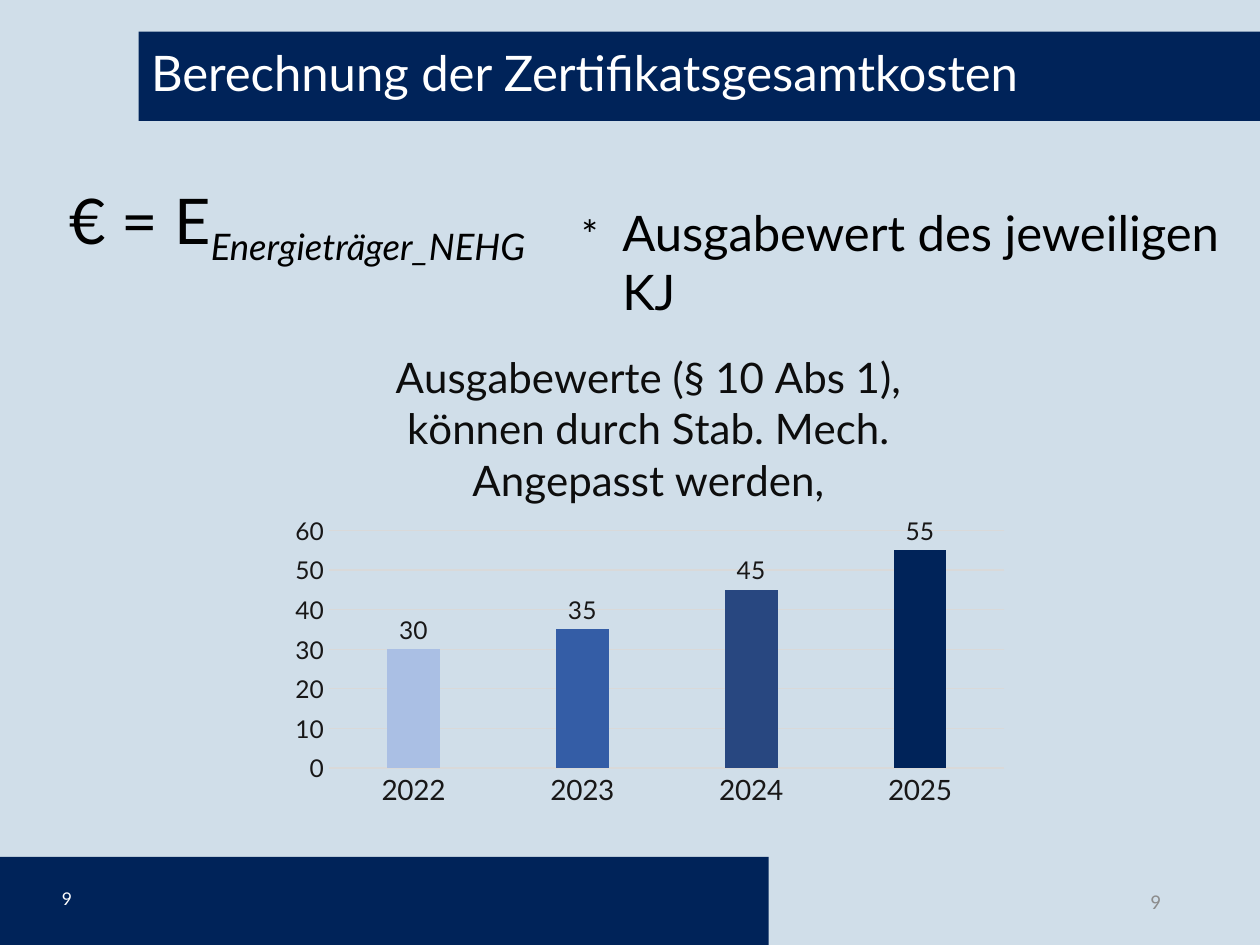
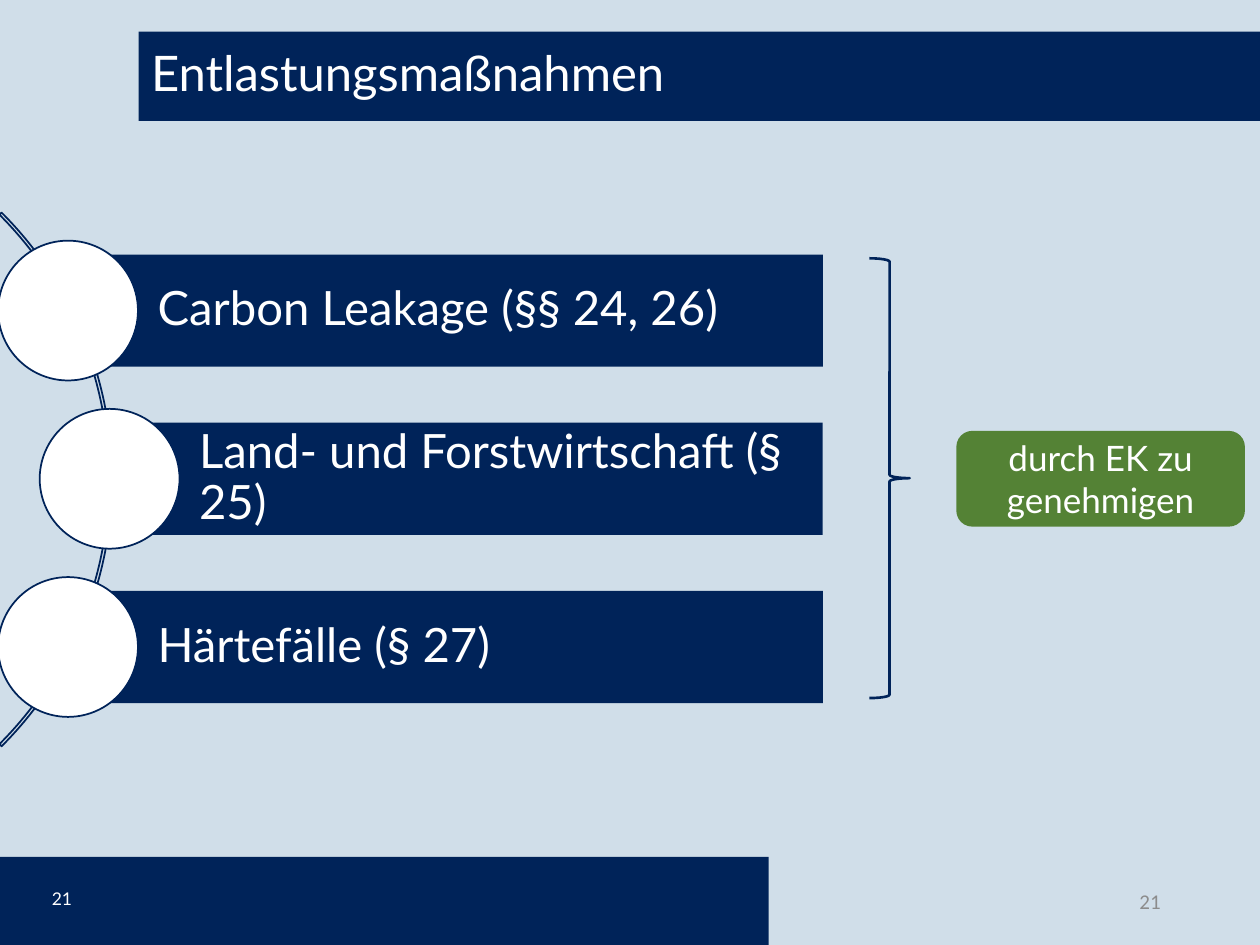
"""Build two slides on certificate costs and relief measures."""
from typing import NamedTuple

from lxml import etree
from pptx import Presentation
from pptx.chart import data as chart_data
from pptx.dml.color import RGBColor
from pptx.enum import chart as charts, shapes, text
from pptx.util import Inches, Pt

NAVY = RGBColor(0x00, 0x23, 0x59)
PALE = RGBColor(0xD0, 0xDE, 0xE9)
WHITE = RGBColor(0xFF, 0xFF, 0xFF)
BLACK = RGBColor(0x00, 0x00, 0x00)
GREY = RGBColor(0x8C, 0x8C, 0x8C)
GRID = RGBColor(0xD9, 0xD9, 0xD9)
INK = RGBColor(0x18, 0x17, 0x17)
TITLE_INK = RGBColor(0x0D, 0x0D, 0x0D)
GREEN = RGBColor(0x54, 0x82, 0x35)
BAR_COLOURS = (RGBColor(0xAA, 0xBF, 0xE4), RGBColor(0x34, 0x5D, 0xA6),
               RGBColor(0x28, 0x47, 0x80), NAVY)
FONT = "Lato"
SHAPE = shapes.MSO_SHAPE
ALIGN = text.PP_ALIGN
ANCHOR = text.MSO_ANCHOR


class Area(NamedTuple):
    """A rectangle in inches."""
    left: float
    top: float
    width: float
    height: float

    def lengths(self) -> list:
        """Return the four lengths for python-pptx."""
        return [Inches(value) for value in self]


class Style(NamedTuple):
    """The look of one paragraph."""
    size: float
    colour: RGBColor = WHITE
    name: str = FONT
    align: ALIGN = ALIGN.LEFT
    spacing: float = 1.0


class Measure(NamedTuple):
    """One relief measure, with its bar's left edge."""
    label: str
    left: float


TITLE = Style(28, spacing=0.9)
MEASURES = (Measure("Carbon Leakage (§§ 24, 26)", 0.54),
            Measure("Land- und Forstwirtschaft (§ 25)", 0.87),
            Measure("Härtefälle (§ 27)", 0.54))
BAR_RIGHT, BAR_TOP, BAR_HEIGHT, BAR_PITCH = 6.53, 2.02, 0.89, 1.335
CIRCLE = 1.11


def set_font(font, size: float, colour: RGBColor, name: str = FONT) -> None:
    """Set size, colour and typeface on a font."""
    font.size, font.name, font.bold = Pt(size), name, False
    font.color.rgb = colour


def write(frame, words: str, style: Style, anchor: ANCHOR = ANCHOR.MIDDLE):
    """Write one paragraph into a text frame and return it."""
    frame.word_wrap = True
    frame.vertical_anchor = anchor
    para = frame.paragraphs[0]
    para.add_run().text = words
    para.alignment, para.line_spacing = style.align, style.spacing
    set_font(para.font, style.size, style.colour, style.name)
    return para


def add_text(page, area: Area, words: str, style: Style,
             anchor: ANCHOR = ANCHOR.MIDDLE):
    """Add a text box with one paragraph and return the paragraph."""
    box = page.shapes.add_textbox(*area.lengths())
    return write(box.text_frame, words, style, anchor)


def add_shape(page, kind: SHAPE, area: Area, fill: RGBColor | None = None,
              line: RGBColor | None = None, weight: float = 1):
    """Add a flat preset shape."""
    shape = page.shapes.add_shape(kind, *area.lengths())
    shape.shadow.inherit = False
    if fill is None:
        shape.fill.background()
    else:
        shape.fill.solid()
        shape.fill.fore_color.rgb = fill
    if line is None:
        shape.line.fill.background()
    else:
        shape.line.color.rgb = line
        shape.line.width = Pt(weight)
    return shape


def add_page(deck, title: str, number: int):
    """Add a slide with the shared bands, title and page numbers."""
    page = deck.slides.add_slide(deck.slide_layouts[6])
    page.background.fill.solid()
    page.background.fill.fore_color.rgb = PALE
    add_shape(page, SHAPE.RECTANGLE, Area(1.1, 0.25, 8.9, 0.71), NAVY)
    add_text(page, Area(7.06, 6.95, 2.25, 0.4), str(number),
             Style(12, GREY, "Calibri", ALIGN.RIGHT))
    add_shape(page, SHAPE.RECTANGLE, Area(0, 6.8, 6.1, 0.7), NAVY)
    add_text(page, Area(0.17, 6.93, 0.5, 0.4), str(number),
             Style(10, align=ALIGN.RIGHT))
    add_text(page, Area(1.1, 0.24, 8.62, 0.72), title, TITLE)
    return page


def place_plot(chart, area: Area) -> None:
    """Fix the inner plot area, in fractions of the chart."""
    plot = chart._chartSpace.chart.plotArea
    space = plot.nsmap["c"]
    for old in plot.findall(f"{{{space}}}layout"):
        plot.remove(old)
    layout = etree.Element(f"{{{space}}}layout")
    manual = etree.SubElement(layout, f"{{{space}}}manualLayout")
    settings = [("layoutTarget", "inner"), ("xMode", "edge"), ("yMode", "edge"),
                *zip("xywh", area)]
    for tag, value in settings:
        etree.SubElement(manual, f"{{{space}}}{tag}", val=str(value))
    plot.insert(0, layout)


def style_axis(axis, size: float) -> None:
    """Remove tick marks and set the label font."""
    axis.major_tick_mark = axis.minor_tick_mark = charts.XL_TICK_MARK.NONE
    set_font(axis.tick_labels.font, size, INK)


def add_price_chart(page) -> None:
    """Add the column chart of issue values per year."""
    values = chart_data.CategoryChartData()
    values.categories = ["2022", "2023", "2024", "2025"]
    values.add_series("Series 1", (30, 35, 45, 55))
    chart = page.shapes.add_chart(charts.XL_CHART_TYPE.COLUMN_CLUSTERED,
                                  *Area(2.2, 2.56, 5.89, 3.93).lengths(),
                                  values).chart
    set_font(chart.font, 10, BLACK, "Calibri")
    chart.has_legend = False
    chart.has_title = True
    para = chart.chart_title.text_frame.paragraphs[0]
    para.add_run().text = ("Ausgabewerte (§ 10 Abs 1), können durch "
                           "Stab. Mech. Angepasst werden,")
    set_font(para.font, 24, TITLE_INK)
    chart.chart_title.include_in_layout = False
    place_plot(chart, Area(0.07, 0.42, 0.91, 0.48))

    years, prices = chart.category_axis, chart.value_axis
    style_axis(years, 16)
    years.format.line.color.rgb = GRID
    years.format.line.width = Pt(0.75)
    style_axis(prices, 14)
    prices.format.line.fill.background()
    prices.minimum_scale, prices.maximum_scale, prices.major_unit = 0, 60, 10
    prices.major_gridlines.format.line.color.rgb = GRID
    prices.major_gridlines.format.line.width = Pt(0.75)

    plot = chart.plots[0]
    plot.gap_width, plot.overlap, plot.vary_by_categories = 219, -27, False
    plot.has_data_labels = True
    plot.data_labels.show_value = True
    plot.data_labels.position = charts.XL_LABEL_POSITION.OUTSIDE_END
    set_font(plot.data_labels.font, 14, INK)
    for index, colour in enumerate(BAR_COLOURS):
        fill = plot.series[0].points[index].format.fill
        fill.solid()
        fill.fore_color.rgb = colour


def build_costs(deck) -> None:
    """Build the slide with the cost formula and the chart."""
    page = add_page(deck, "Berechnung der Zertifikatsgesamtkosten", 9)
    add_text(page, Area(4.5, 1.6, 0.37, 0.5), "*",
             Style(24, BLACK, "Calibri"), ANCHOR.TOP)
    formula = add_text(page, Area(0.45, 1.39, 4.03, 0.71), "€ = E",
                       Style(36, BLACK), ANCHOR.TOP)
    carrier = formula.add_run()
    carrier.text = "Energieträger_NEHG"
    carrier.font.italic = True
    carrier.font._element.set("baseline", "-25000")
    add_text(page, Area(4.84, 1.56, 4.99, 0.57),
             "Ausgabewert des jeweiligen KJ", Style(28, BLACK), ANCHOR.TOP)
    add_price_chart(page)


def add_measure(page, measure: Measure, top: float) -> None:
    """Draw one labelled bar with the circle at its left end."""
    bar = add_shape(page, SHAPE.RECTANGLE,
                    Area(measure.left, top, BAR_RIGHT - measure.left, BAR_HEIGHT),
                    NAVY)
    frame = bar.text_frame
    frame.margin_left = Inches(0.71)
    frame.margin_right = frame.margin_top = frame.margin_bottom = Inches(0.07)
    write(frame, measure.label, Style(27, spacing=0.9))
    add_shape(page, SHAPE.OVAL,
              Area(measure.left - CIRCLE / 2, top + (BAR_HEIGHT - CIRCLE) / 2,
                   CIRCLE, CIRCLE), WHITE, NAVY)


def build_relief(deck) -> None:
    """Build the slide with the relief measures."""
    page = add_page(deck, "Entlastungsmaßnahmen", 21)
    arc = add_shape(page, SHAPE.BLOCK_ARC, Area(-5.1, 0.81, 5.99, 5.99), line=NAVY)
    for index, value in enumerate((189, 27, 0.004)):
        arc.adjustments[index] = value
    for index, measure in enumerate(MEASURES):
        add_measure(page, measure, BAR_TOP + index * BAR_PITCH)
    add_shape(page, SHAPE.RIGHT_BRACE, Area(6.9, 2.05, 0.32, 3.49),
              line=NAVY, weight=1.5)
    approval = add_shape(page, SHAPE.ROUNDED_RECTANGLE,
                         Area(7.59, 3.42, 2.29, 0.76), GREEN)
    write(approval.text_frame, "durch EK zu genehmigen",
          Style(20, align=ALIGN.CENTER))


def main() -> None:
    """Create and save the deck."""
    deck = Presentation()
    deck.slide_width, deck.slide_height = Inches(10), Inches(7.5)
    build_costs(deck)
    build_relief(deck)
    deck.save("out.pptx")


if __name__ == "__main__":
    main()
